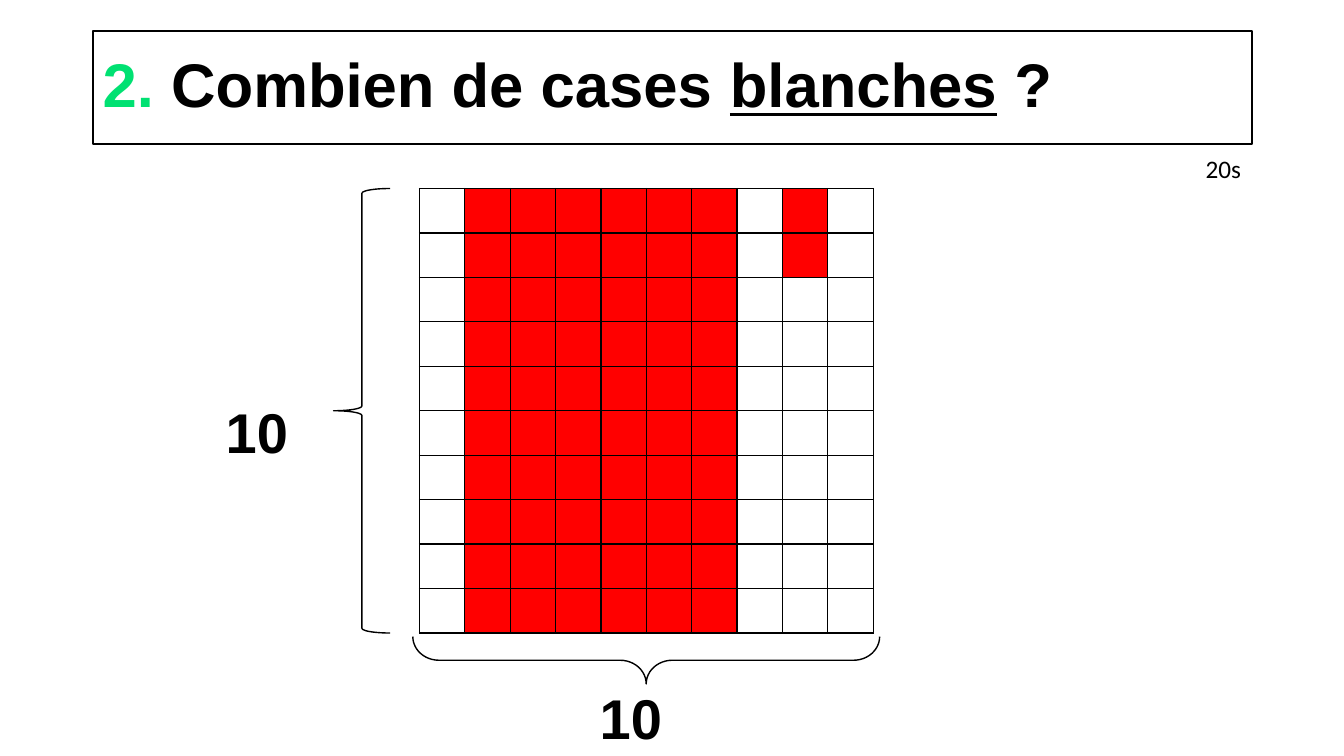
from lxml.etree import SubElement
from pptx import Presentation
from pptx.dml.color import RGBColor
from pptx.enum.shapes import MSO_SHAPE
from pptx.enum.text import MSO_ANCHOR, MSO_AUTO_SIZE
from pptx.oxml.ns import qn
from pptx.util import Inches, Pt

BLACK = RGBColor(0x00, 0x00, 0x00)
RED = RGBColor(0xFF, 0x00, 0x00)
GREEN = RGBColor(0x00, 0xE1, 0x72)

GRID_SIZE = 10
FULL_RED_COLUMNS = range(1, 7)
PARTIAL_RED_COLUMN, PARTIAL_RED_ROWS = 8, 2
GRID_BOX = (4.16, 1.87, 4.5, 4.41)


def add_run(paragraph, text, size, color=BLACK, font_name="Arial", bold=True, underline=False):
    run = paragraph.add_run()
    run.text = text
    font = run.font
    font.name, font.size, font.bold, font.underline = font_name, Pt(size), bold, underline
    font.color.rgb = color


def add_title(slide, box):
    shape = slide.shapes.add_textbox(*map(Inches, box))
    shape.line.color.rgb = BLACK
    shape.line.width = Pt(1.5)
    frame = shape.text_frame
    frame.word_wrap = True
    frame.vertical_anchor = MSO_ANCHOR.MIDDLE
    paragraph = frame.paragraphs[0]
    paragraph.line_spacing = 0.9
    add_run(paragraph, "2. ", 44, GREEN)
    add_run(paragraph, "Combien de cases ", 44)
    add_run(paragraph, "blanches", 44, underline=True)
    add_run(paragraph, " ?", 44)


def add_label(slide, box, text, size, **style):
    frame = slide.shapes.add_textbox(*map(Inches, box)).text_frame
    frame.word_wrap = False
    frame.auto_size = MSO_AUTO_SIZE.SHAPE_TO_FIT_TEXT
    add_run(frame.paragraphs[0], text, size, **style)


def add_cell_borders(cell):
    properties = cell._tc.get_or_add_tcPr()
    for side in ("lnL", "lnR", "lnT", "lnB"):
        border = SubElement(properties, qn(f"a:{side}"), w=str(Pt(1)))
        fill = SubElement(border, qn("a:solidFill"))
        SubElement(fill, qn("a:srgbClr"), val=str(BLACK))


def is_red(row, column):
    return column in FULL_RED_COLUMNS or (
        column == PARTIAL_RED_COLUMN and row < PARTIAL_RED_ROWS)


def add_grid(slide, box):
    left, top, width, height = map(Inches, box)
    table = slide.shapes.add_table(GRID_SIZE, GRID_SIZE, left, top, width, height).table
    table.first_row = table.horz_banding = False
    for column in table.columns:
        column.width = width // GRID_SIZE
    for row in table.rows:
        row.height = height // GRID_SIZE
    for index, cell in enumerate(table.iter_cells()):
        add_cell_borders(cell)
        if is_red(*divmod(index, GRID_SIZE)):
            cell.fill.solid()
            cell.fill.fore_color.rgb = RED
        else:
            cell.fill.background()


def add_brace(slide, box, rotation=0, curve=None):
    brace = slide.shapes.add_shape(MSO_SHAPE.LEFT_BRACE, *map(Inches, box))
    brace.shadow.inherit = False
    brace.fill.background()
    brace.line.color.rgb = BLACK
    brace.line.width = Pt(1)
    brace.rotation = rotation
    if curve is not None:
        brace.adjustments[0] = curve


def add_counted_grid(slide, box):
    """Grid with a brace and a count on its left and below it."""
    left, top, width, height = box
    middle_x, middle_y = left + width / 2, top + height / 2
    add_grid(slide, box)
    add_brace(slide, (left - 0.85, top, 0.56, height))
    add_label(slide, (left - 2.02, middle_y - 0.18, 0.83, 0.77), str(GRID_SIZE), 40)
    # The lower brace is an upright one turned about its centre.
    depth, span = 0.47, width + 0.13
    center_y = top + height + 0.27
    add_brace(slide, (middle_x - depth / 2, center_y - span / 2, depth, span), 270, 0.55)
    add_label(slide, (middle_x - 0.56, top + height + 0.45, 0.83, 0.77), str(GRID_SIZE), 40)


def main():
    presentation = Presentation()
    presentation.slide_width, presentation.slide_height = Inches(13.33), Inches(7.5)
    slide = presentation.slides.add_slide(presentation.slide_layouts[6])
    add_title(slide, (0.92, 0.31, 11.5, 1.12))
    add_counted_grid(slide, GRID_BOX)
    add_label(slide, (11.86, 1.47, 0.56, 0.4), "20s", 18, font_name="Calibri", bold=False)
    presentation.save("out.pptx")


if __name__ == "__main__":
    main()
